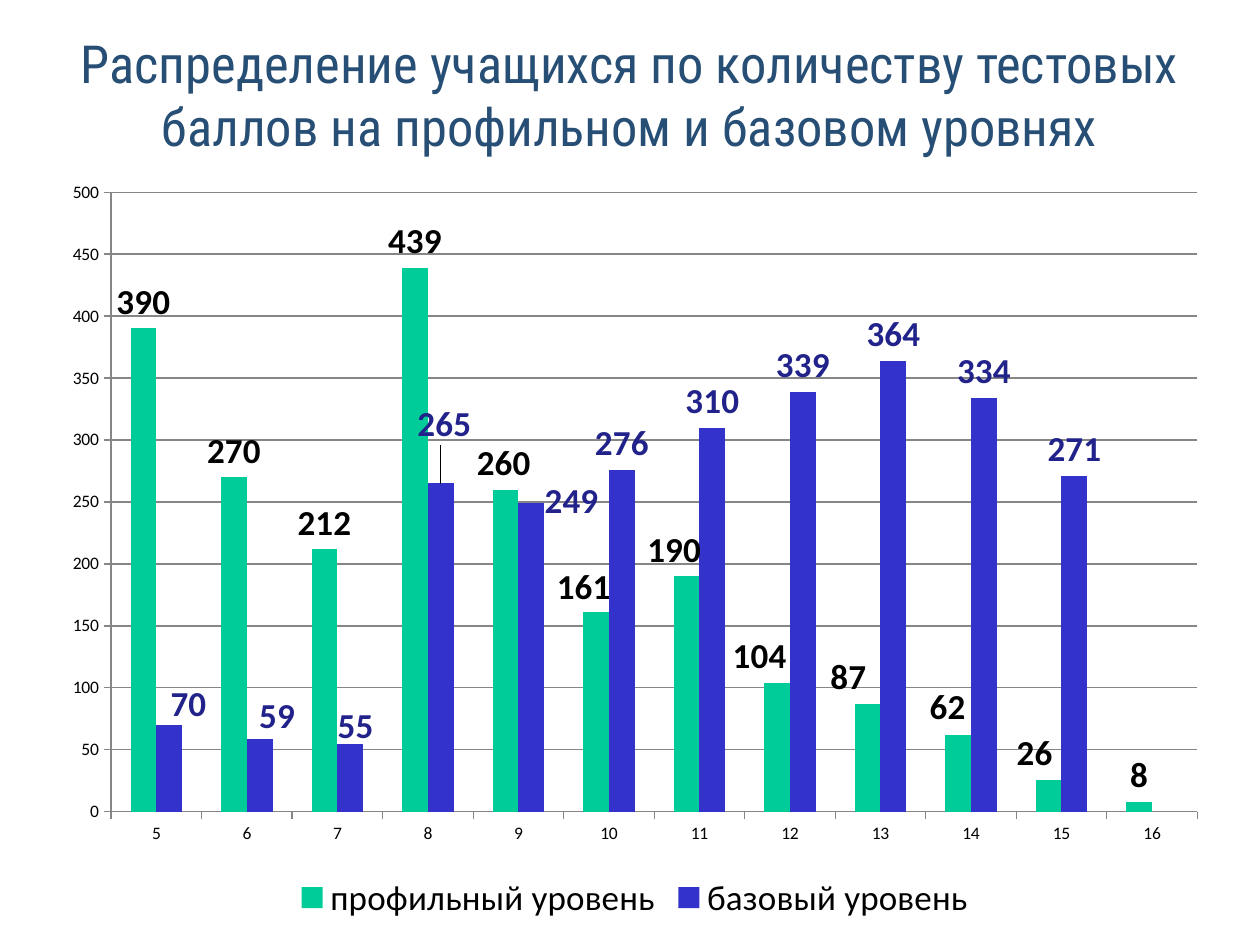
from dataclasses import dataclass, field

from lxml import etree
from pptx import Presentation
from pptx.chart.chart import Chart
from pptx.chart.data import CategoryChartData
from pptx.chart.series import BarSeries
from pptx.dml.color import RGBColor
from pptx.enum.chart import XL_CHART_TYPE, XL_LABEL_POSITION, XL_LEGEND_POSITION, XL_TICK_MARK
from pptx.enum.text import MSO_ANCHOR, PP_ALIGN
from pptx.oxml.ns import qn
from pptx.util import Pt

COLUMNS = XL_CHART_TYPE.COLUMN_CLUSTERED
ABOVE_BAR = XL_LABEL_POSITION.OUTSIDE_END
BOTTOM = XL_LEGEND_POSITION.BOTTOM
OUTSIDE, NO_TICK = XL_TICK_MARK.OUTSIDE, XL_TICK_MARK.NONE
MIDDLE = MSO_ANCHOR.MIDDLE
CENTER = PP_ALIGN.CENTER

BLACK = RGBColor(0x00, 0x00, 0x00)
GREEN = RGBColor(0x00, 0xCC, 0x99)
BLUE = RGBColor(0x33, 0x33, 0xCC)
NAVY = RGBColor(0x22, 0x22, 0x8B)
TITLE_BLUE = RGBColor(0x27, 0x4E, 0x75)
GRID_GRAY = RGBColor(0x86, 0x86, 0x86)

CHART_LEFT, CHART_TOP, CHART_WIDTH, CHART_HEIGHT = 28, 96, 669.6, 433.4
TITLE = "Распределение учащихся по количеству тестовых баллов на профильном и базовом уровнях"


@dataclass
class Level:
    name: str
    values: list[int | None]
    fill: RGBColor
    label_color: RGBColor
    label_shifts: dict[int, tuple[float, float]] = field(default_factory=dict)


LEVELS = [
    Level("профильный уровень", [390, 270, 212, 439, 260, 161, 190, 104, 87, 62, 26, 8], GREEN, BLACK,
          {4: (-1, 0), 5: (-7, 1), 6: (-7, 0), 7: (-10, 0), 8: (-11, 0), 9: (-6, -1), 10: (-8, 0)}),
    Level("базовый уровень", [70, 59, 55, 265, 249, 276, 310, 339, 364, 334, 271, None], BLUE, NAVY,
          {0: (11, 3), 1: (10, 2), 2: (3, 5), 3: (2, -19), 4: (23, 14)}),
]


def apply_font(font, color: RGBColor, **values) -> None:
    for name, value in values.items():
        setattr(font, name, value)
    font.color.rgb = color


def manual_layout(**values) -> etree._Element:
    layout = etree.Element(qn("c:layout"))
    manual = etree.SubElement(layout, qn("c:manualLayout"))
    for name, value in values.items():
        etree.SubElement(manual, qn(f"c:{name}")).set("val", str(value))
    return layout


def place_plot(chart: Chart) -> None:
    area = chart._chartSpace.chart.plotArea
    for old in area.findall(qn("c:layout")):
        area.remove(old)
    area.insert(0, manual_layout(layoutTarget="inner", xMode="edge", yMode="edge",
                                 x=0.053, y=0.032, w=0.927, h=0.817))


def style_series(series: BarSeries, level: Level) -> None:
    series.format.fill.solid()
    series.format.fill.fore_color.rgb = level.fill
    series.invert_if_negative = False
    label_font = {"size": Pt(20), "bold": True, "name": "Calibri"}
    labels = series.data_labels
    labels.show_value = True
    labels.position = ABOVE_BAR
    apply_font(labels.font, level.label_color, **label_font)
    for index, (right, down) in level.label_shifts.items():
        label = series.points[index].data_label
        apply_font(label.font, level.label_color, **label_font)
        label.position = ABOVE_BAR
        element = labels._element.find(f"{qn('c:dLbl')}[{qn('c:idx')}][@val]")
        for element in labels._element.findall(qn("c:dLbl")):
            position = element.find(qn("c:idx"))
            if position.get("val") == str(index):
                position.addnext(manual_layout(x=round(right / CHART_WIDTH, 4),
                                               y=round(down / CHART_HEIGHT, 4)))


def style_axes(chart: Chart) -> None:
    for axis in (chart.category_axis, chart.value_axis):
        axis.major_tick_mark = OUTSIDE
        axis.minor_tick_mark = NO_TICK
        axis.format.line.color.rgb = GRID_GRAY
        axis.format.line.width = Pt(0.75)
    scale = chart.value_axis
    for name, value in {"minimum_scale": 0, "maximum_scale": 500, "major_unit": 50}.items():
        setattr(scale, name, value)
    scale.has_major_gridlines = True
    scale.major_gridlines.format.line.color.rgb = GRID_GRAY
    scale.major_gridlines.format.line.width = Pt(0.75)


def add_level_chart(page) -> None:
    data = CategoryChartData()
    data.categories = [str(score) for score in range(5, 17)]
    for level in LEVELS:
        data.add_series(level.name, level.values)
    frame = page.shapes.add_chart(COLUMNS, Pt(CHART_LEFT), Pt(CHART_TOP),
                                  Pt(CHART_WIDTH), Pt(CHART_HEIGHT), data)
    chart = frame.chart
    chart.has_title = False
    apply_font(chart.font, BLACK, size=Pt(10), name="Calibri")
    plot = chart.plots[0]
    for name, value in {"gap_width": 150, "overlap": 0, "vary_by_categories": False}.items():
        setattr(plot, name, value)
    for series, level in zip(plot.series, LEVELS):
        style_series(series, level)
    style_axes(chart)
    place_plot(chart)
    chart.has_legend = True
    chart.legend.position = BOTTOM
    chart.legend.include_in_layout = False
    apply_font(chart.legend.font, BLACK, size=Pt(20), name="Calibri")


def write_title(page) -> None:
    box = page.shapes.title
    for name, value in {"left": 0, "top": 11.5, "width": 720, "height": 84.2}.items():
        setattr(box, name, Pt(value))
    box.text_frame.vertical_anchor = MIDDLE
    box.text_frame.word_wrap = True
    para = box.text_frame.paragraphs[0]
    para.alignment = CENTER
    span = para.add_run()
    span.text = TITLE
    apply_font(span.font, TITLE_BLUE, size=Pt(30), name="Roboto Condensed")


def main() -> None:
    deck = Presentation()
    deck.slide_width, deck.slide_height = Pt(720), Pt(540)
    page = deck.slides.add_slide(deck.slide_layouts[5])
    add_level_chart(page)
    write_title(page)
    deck.save("out.pptx")


if __name__ == "__main__":
    main()
